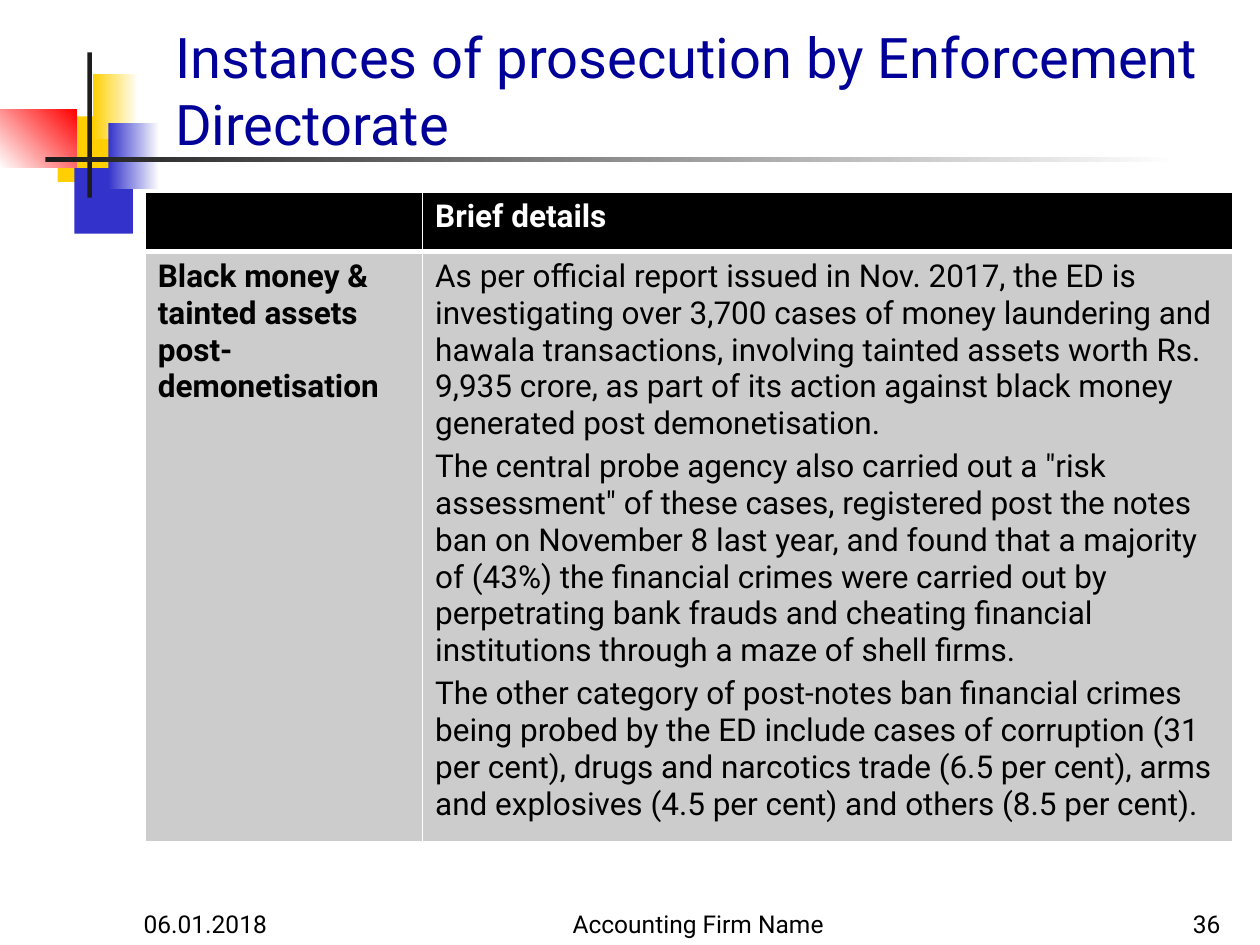
from lxml import etree
from pptx import Presentation
from pptx import util as u
from pptx.dml.color import RGBColor
from pptx.enum import shapes, text
from pptx.oxml import ns

Pt = u.Pt
WHITE = RGBColor(0xFF, 0xFF, 0xFF)
BLACK = RGBColor(0, 0, 0)
INK = RGBColor(0x1C, 0x1C, 0x1C)
GOLD = RGBColor(0xFF, 0xCF, 0x01)
BLUE = RGBColor(0x33, 0x33, 0xCC)
NAVY = RGBColor(0, 0, 0x99)
RED = RGBColor(0xFF, 0, 0)
GREY = RGBColor(0xCC, 0xCC, 0xCC)
LEFT, MID, RIGHT = text.PP_ALIGN.LEFT, text.PP_ALIGN.CENTER, text.PP_ALIGN.RIGHT

TOPIC = "Black money & tainted assets post-demonetisation"
DETAILS = [
    "As per official report issued in Nov. 2017, the ED is investigating over "
    "3,700 cases of money laundering and hawala transactions, involving tainted "
    "assets worth Rs. 9,935 crore, as part of its action against black money "
    "generated post demonetisation.",
    'The central probe agency also carried out a "risk assessment" of these '
    "cases, registered post the notes ban on November 8 last year, and found "
    "that a majority of (43%) the financial crimes were carried out by "
    "perpetrating bank frauds and cheating financial institutions through a "
    "maze of shell firms.",
    "The other category of post-notes ban financial crimes being probed by the "
    "ED include cases of corruption (31 per cent), drugs and narcotics trade "
    "(6.5 per cent), arms and explosives (4.5 per cent) and others (8.5 per cent).",
]


def write(frame, paras, size=18, color=BLACK, bold=False, align=LEFT, gap=0):
    """Fill a text frame; gap is the space between paragraphs."""
    frame.word_wrap = True
    for i, words in enumerate(paras):
        para = frame.paragraphs[0] if i == 0 else frame.add_paragraph()
        para.alignment = align
        if i < len(paras) - 1:
            para.space_after = Pt(gap)
        run = para.add_run()
        run.text = words
        font = run.font
        font.name, font.size, font.bold = "Roboto", Pt(size), bold
        font.color.rgb = color


def edge(cell, **widths):
    """Draw white cell borders, keyed by side in schema order."""
    props = cell._tc.get_or_add_tcPr()
    for i, (side, width) in enumerate(widths.items()):
        line = etree.Element(ns.qn(f"a:ln{side}"), w=str(Pt(width)))
        fill = etree.SubElement(line, ns.qn("a:solidFill"))
        etree.SubElement(fill, ns.qn("a:srgbClr"), val=str(WHITE))
        props.insert(i, line)


class Deck:
    def __init__(self):
        self.file = Presentation()
        self.file.slide_width, self.file.slide_height = Pt(720), Pt(540)
        self.slide = self.file.slides.add_slide(self.file.slide_layouts[6])

    def block(self, x, y, w, h, color, end=None, angle=0):
        """Add a rectangle, fading from color to end if end is given."""
        box = self.slide.shapes.add_shape(
            shapes.MSO_SHAPE.RECTANGLE, Pt(x), Pt(y), Pt(w), Pt(h))
        box.shadow.inherit = False
        box.line.fill.background()
        if end is None:
            box.fill.solid()
            box.fill.fore_color.rgb = color
        else:
            box.fill.gradient()
            box.fill.gradient_angle = angle
            for stop, tone in zip(box.fill.gradient_stops, (color, end)):
                stop.color.rgb = tone

    def label(self, x, y, w, h, words, **style):
        box = self.slide.shapes.add_textbox(Pt(x), Pt(y), Pt(w), Pt(h))
        box.text_frame.vertical_anchor = text.MSO_ANCHOR.BOTTOM
        write(box.text_frame, [words], **style)

    def table(self, x, y, cols, rows, cells):
        """Add a table; each cell is (paragraphs, fill, text style)."""
        grid = self.slide.shapes.add_table(
            len(rows), len(cols), Pt(x), Pt(y), Pt(sum(cols)), Pt(sum(rows))).table
        for col, width in zip(grid.columns, cols):
            col.width = Pt(width)
        for r, height in enumerate(rows):
            grid.rows[r].height = Pt(height)
            for c, (paras, fill, style) in enumerate(cells[r]):
                cell = grid.cell(r, c)
                cell.fill.solid()
                cell.fill.fore_color.rgb = fill
                write(cell.text_frame, paras, **style)
                edge(cell, L=1, R=1, T=3 if r == 1 else 1, B=3 if r == 0 else 1)


def main():
    deck = Deck()
    deck.block(33, 66.5, 34.5, 37.5, GOLD)
    deck.block(42.5, 96, 33.5, 37.5, BLUE)
    deck.block(53, 42, 26, 37.5, GOLD, WHITE)
    deck.block(62, 70.5, 29, 37.5, BLUE, WHITE)
    deck.block(0, 62.5, 44, 33.5, WHITE, RED, angle=45)
    deck.block(50, 30, 2.5, 83, INK)
    deck.block(26, 90, 648, 2.5, INK, WHITE)

    deck.label(93, 13, 612, 80,
               "Instances of prosecution by Enforcement Directorate",
               size=32, color=NAVY)
    for x, w, words, align in (
        (554.5, 150, "36", RIGHT),
        (75, 150, "06.01.2018", LEFT),
        (285, 228, "Accounting Firm Name", MID),
    ):
        deck.label(x, 504, w, 36, words, size=14, align=align)

    head = dict(color=WHITE, bold=True)
    deck.table(83, 110, (158.5, 463), (33.8, 329.5), (
        (([], BLACK, head), (["Brief details"], BLACK, head)),
        (([TOPIC], GREY, dict(bold=True)), (DETAILS, GREY, dict(gap=3))),
    ))
    deck.file.save("out.pptx")


if __name__ == "__main__":
    main()
